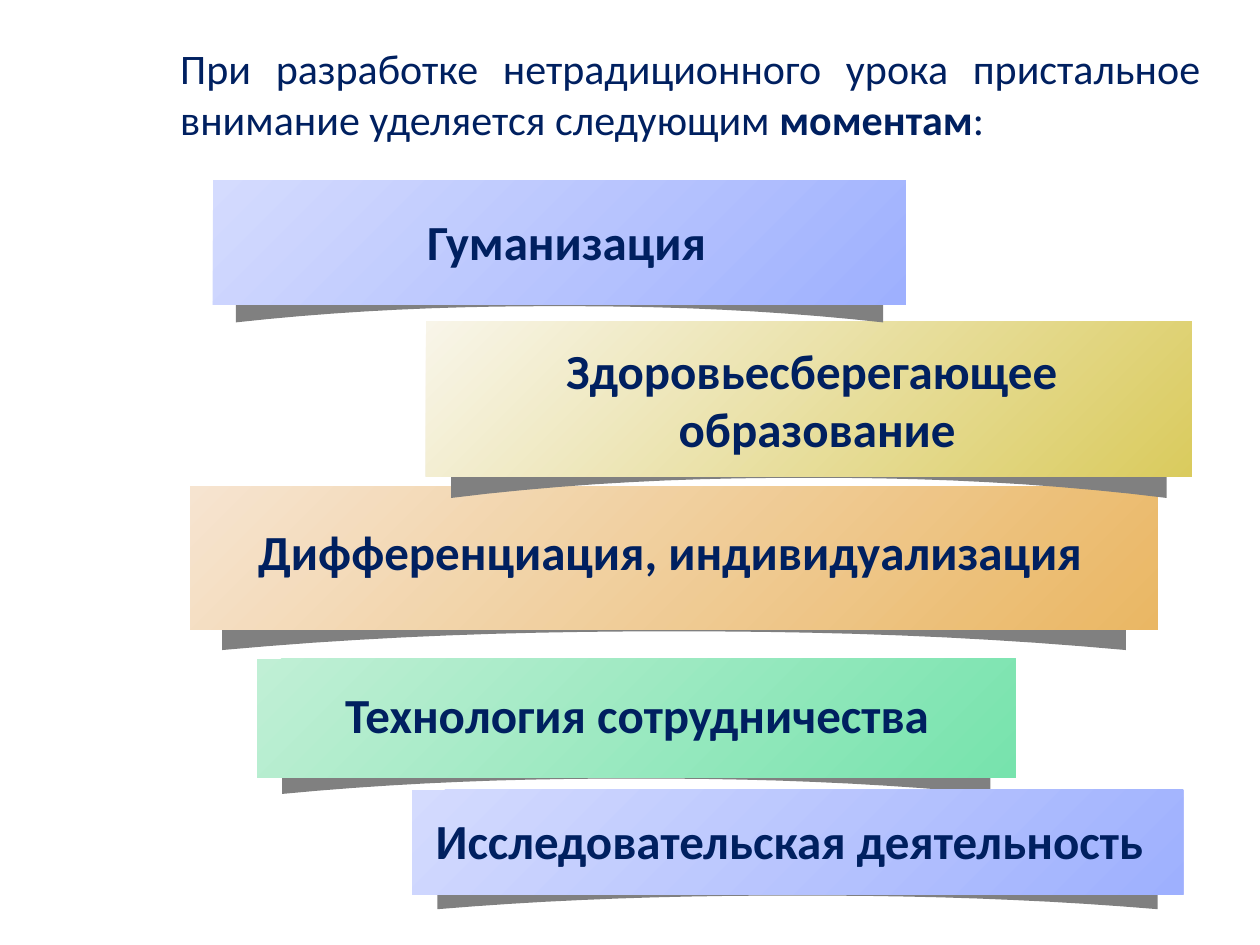
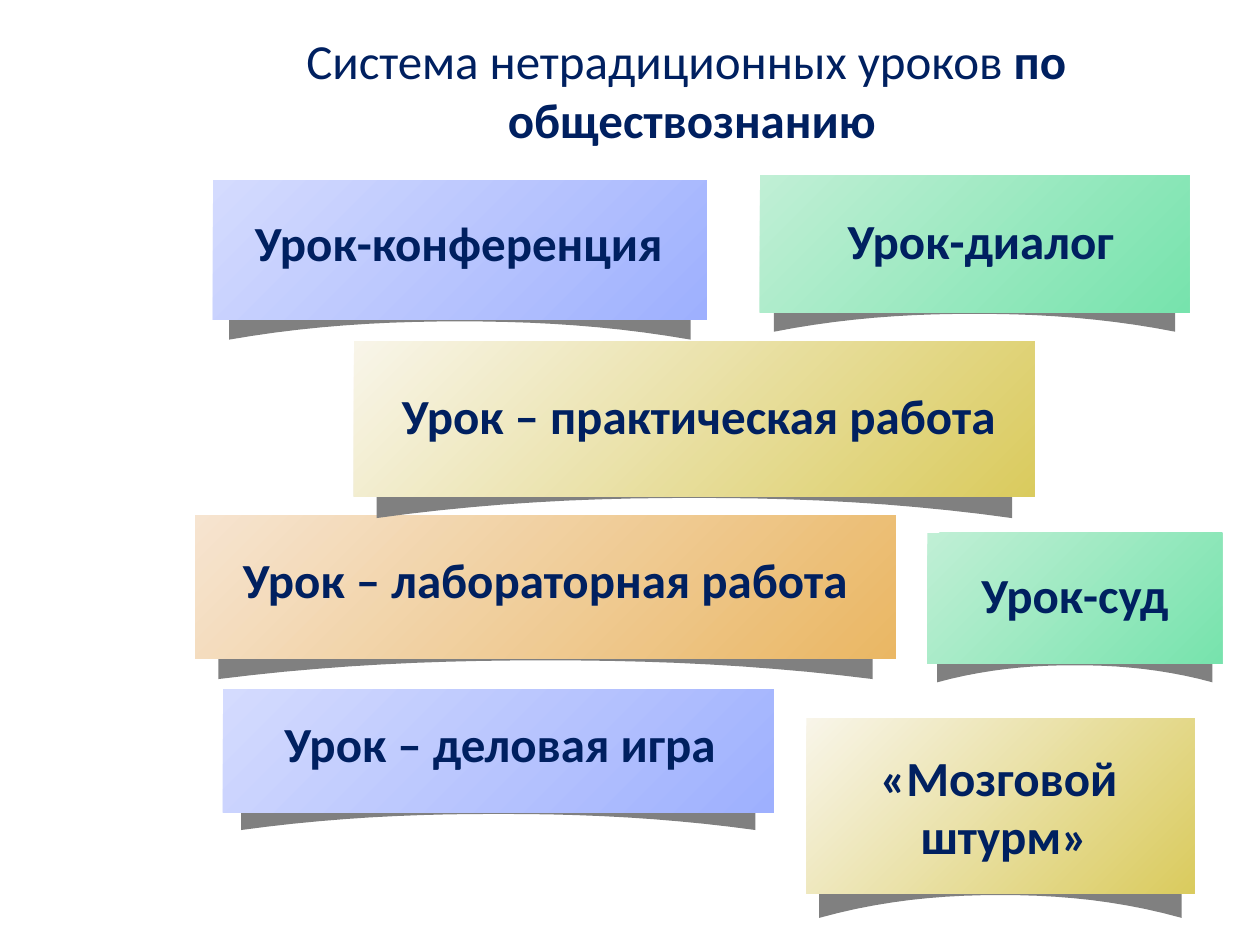
"""Builds two slides of gradient cards on non-traditional lesson design."""
import pptx
import pptx.util
import pptx.dml.color
import pptx.enum.shapes
import pptx.enum.text

Inches = pptx.util.Inches
RGB = pptx.dml.color.RGBColor
ALIGN = pptx.enum.text.PP_ALIGN
NAVY = RGB(0x00, 0x20, 0x60)
GRAY = RGB(0x80, 0x80, 0x80)
BLUE = RGB(0xD4, 0xDB, 0xFE), RGB(0x9E, 0xB0, 0xFE)
GREEN = RGB(0xC0, 0xEF, 0xD5), RGB(0x77, 0xE3, 0xAD)
SAND = RGB(0xF8, 0xF5, 0xE9), RGB(0xDA, 0xCB, 0x5E)
ORANGE = RGB(0xF6, 0xE4, 0xD0), RGB(0xEA, 0xB7, 0x64)
CURVE_STEPS = 20


def add_run(p, text, size=28, bold=True):
    r = p.add_run()
    r.text = text
    r.font.name = "Calibri"
    r.font.size = pptx.util.Pt(size)
    r.font.bold = bold
    r.font.color.rgb = NAVY


def add_card(s, box, colors):
    left, top, width, height = box
    group = s.shapes.add_group_shape()

    x0, span = left + 0.033 * width, 0.934 * width
    points = [(0, 0.78), (0.5, 0.66), (1, 0.78)]
    for i in range(CURVE_STEPS + 1):
        x = 1 - i / CURVE_STEPS
        points.append((x, 1.01 + 0.13 * abs(2 * x - 1) ** 2.2))
    points = [(Inches(x0 + x * span), Inches(top + y * height)) for x, y in points]
    builder = group.shapes.build_freeform(*points[0])
    builder.add_line_segments(points[1:], close=True)
    curl = builder.convert_to_shape()
    curl.fill.solid()
    curl.fill.fore_color.rgb = GRAY

    sp = group.shapes.add_shape(pptx.enum.shapes.MSO_SHAPE.RECTANGLE, *map(Inches, box))
    sp.fill.gradient()
    sp.fill.gradient_angle = 315
    for stop, color in zip(sp.fill.gradient_stops, colors):
        stop.color.rgb = color
    for part in (curl, sp):
        part.line.fill.background()
        part.shadow.inherit = False


slides = [
    {
        "box": (1.33, 0.29, 8.3, 0.91), "align": ALIGN.JUSTIFY, "size": 24,
        "title": [[("При разработке нетрадиционного урока пристальное внимание "
                    "уделяется следующим ", False), ("моментам", True), (":", False)]],
        "cards": [
            ((2.04, 5.23, 6.02, 0.94), GREEN, (2.64, 5.38, 4.96, 0.57), ALIGN.LEFT,
             "Технология сотрудничества"),
            ((1.51, 3.86, 7.68, 1.14), ORANGE, (1.95, 4.09, 6.91, 0.57), ALIGN.LEFT,
             "Дифференциация, индивидуализация"),
            ((3.38, 2.55, 6.08, 1.23), SAND, (4.37, 2.65, 4.23, 1.04), ALIGN.CENTER,
             "Здоровьесберегающее \nобразование"),
            ((3.27, 6.27, 6.12, 0.83), BLUE, (3.36, 6.38, 5.88, 0.57), ALIGN.LEFT,
             "Исследовательская деятельность"),
            ((1.69, 1.43, 5.5, 0.99), BLUE, (3.03, 1.63, 3.02, 0.57), ALIGN.CENTER,
             "Гуманизация "),
        ],
    },
    {
        "box": (1.34, 0.19, 8.3, 1.04), "align": ALIGN.CENTER, "size": 28,
        "title": [[("Система нетрадиционных уроков ", False), ("по ", True)],
                  [("обществознанию", True)]],
        "cards": [
            ((6.03, 1.39, 3.41, 1.09), GREEN, (6.63, 1.62, 2.34, 0.57), ALIGN.LEFT,
             "Урок-диалог"),
            ((1.55, 4.09, 5.56, 1.14), ORANGE, (1.83, 4.31, 5.05, 0.57), ALIGN.LEFT,
             "Урок – лабораторная работа"),
            ((2.81, 2.71, 5.4, 1.23), SAND, (3.09, 3.01, 5.01, 0.57), ALIGN.JUSTIFY,
             "Урок – практическая работа"),
            ((1.77, 5.47, 4.37, 0.98), BLUE, (2.16, 5.61, 3.67, 0.57), ALIGN.LEFT,
             "Урок – деловая игра"),
            ((1.69, 1.43, 3.92, 1.11), BLUE, (1.9, 1.64, 3.57, 0.57), ALIGN.CENTER,
             "Урок-конференция "),
            ((7.36, 4.23, 2.34, 1.04), GREEN, (7.69, 4.43, 1.7, 0.57), ALIGN.LEFT,
             "Урок-суд"),
            ((6.4, 5.7, 3.08, 1.39), SAND, (6.87, 5.88, 2.2, 1.04), ALIGN.CENTER,
             "«Мозговой \nштурм»"),
        ],
    },
]

prs = pptx.Presentation()
prs.slide_width, prs.slide_height = Inches(10), Inches(7.5)

for content in slides:
    s = prs.slides.add_slide(prs.slide_layouts[5])
    title = s.shapes.title
    title.left, title.top, title.width, title.height = map(Inches, content["box"])
    tf = title.text_frame
    tf.word_wrap = True
    tf.auto_size = pptx.enum.text.MSO_AUTO_SIZE.NONE
    tf.vertical_anchor = pptx.enum.text.MSO_ANCHOR.TOP
    for i, runs in enumerate(content["title"]):
        p = tf.add_paragraph() if i else tf.paragraphs[0]
        p.alignment = content["align"]
        for text, bold in runs:
            add_run(p, text, size=content["size"], bold=bold)

    for box, colors, label_box, align, label in content["cards"]:
        add_card(s, box, colors)
        tf = s.shapes.add_textbox(*map(Inches, label_box)).text_frame
        tf.word_wrap = True
        for i, line in enumerate(label.split("\n")):
            p = tf.add_paragraph() if i else tf.paragraphs[0]
            p.alignment = align
            add_run(p, line)

prs.save("out.pptx")
